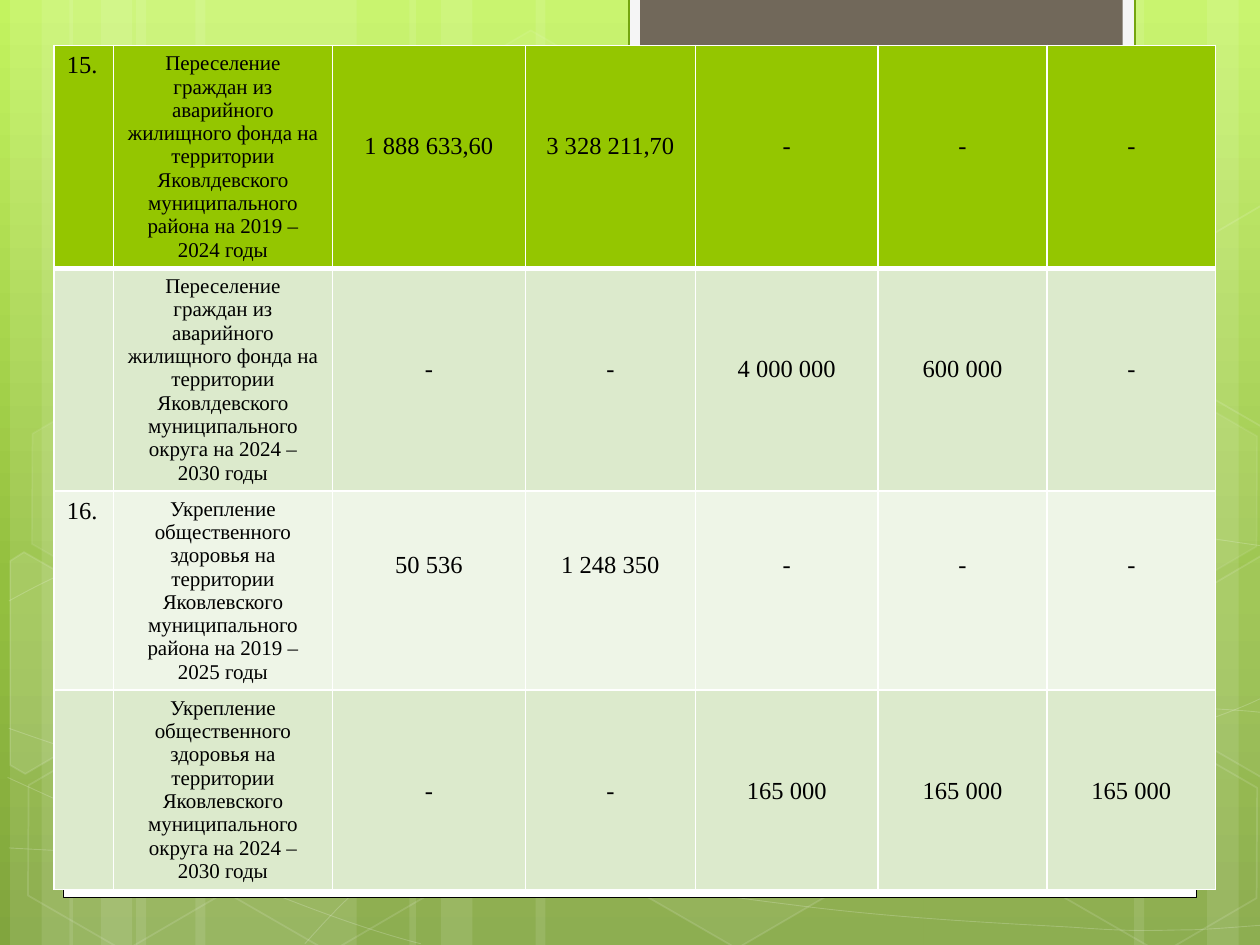
from copy import deepcopy
from dataclasses import dataclass
from math import cos, radians, sin

from pptx import Presentation
from pptx.dml.color import RGBColor
from pptx.enum.shapes import MSO_SHAPE
from pptx.enum.text import MSO_ANCHOR, PP_ALIGN
from pptx.oxml import parse_xml
from pptx.oxml.ns import nsdecls, qn
from pptx.util import Cm, Pt

RECTANGLE, HEXAGON = MSO_SHAPE.RECTANGLE, MSO_SHAPE.HEXAGON
TOP, MIDDLE = MSO_ANCHOR.TOP, MSO_ANCHOR.MIDDLE
LEFT, CENTER = PP_ALIGN.LEFT, PP_ALIGN.CENTER
FONT, WHITE, BLACK = "Times New Roman", "FFFFFF", "000000"
GRID = 2.54  # cm per layout unit; the slide is 10 by 7.5 units
TILT = 30  # degrees, shared by all hexagons


@dataclass
class Style:
    """Fill and line; alphas are percentages."""
    fill: str | None = None
    fill_alpha: int = 100
    line: str | None = None
    width: float = 1
    line_alpha: int = 100


@dataclass
class Band:
    left: float
    width: float
    rotation: int = 0


@dataclass
class Hexagon:
    left: float
    top: float
    fill_alpha: int
    line_alpha: int


@dataclass
class CutHexagon:
    """A hexagon clipped by the slide edge, with corners as they appear when tilted."""
    center: tuple[float, float]
    fill_alpha: int
    corners: list[tuple[float, float]]


@dataclass
class Programme:
    number: str
    title: str
    values: tuple[str, ...]
    fill: str
    height: float
    value_margin: float


BANDS = [Band(1.08, 1.75), Band(0.08, 0.5), Band(0.33, 0.83), Band(1.55, 1.75),
         Band(0.55, 0.5), Band(0.8, 0.83), Band(7.33, 1.75, 180), Band(9.58, 0.5, 180),
         Band(9, 0.83, 180), Band(4.25, 3.08), Band(3.25, 0.5), Band(3.5, 0.83)]

# Each curve: a start point, then cubic segments (six numbers) or straight ones (two)
CURVES = [
    [(0.07, 6.73), (0.61, 6.76, 1.15, 6.79, 1.9, 6.78), (2.65, 6.77, 3.58, 6.75, 4.58, 6.65),
     (5.58, 6.55, 7, 6.36, 7.92, 6.17), (8.83, 5.98, 9.77, 5.68, 10.07, 5.51)],
    [(0.07, 4.77), (0.36, 4.61, 0.65, 4.46, 1.21, 4.31), (1.78, 4.16, 2.59, 3.94, 3.47, 3.87),
     (4.36, 3.8, 5.44, 3.79, 6.54, 3.87), (7.64, 3.95, 9.47, 4.26, 10.07, 4.34)],
    [(0.06, 6.17), (1.27, 6.72, 2.47, 7.27, 3.34, 7.49)],
    [(0.07, 5.78), (0.38, 5.89, 0.7, 6, 1.28, 6.16), (1.86, 6.31, 2.73, 6.56, 3.57, 6.73),
     (4.4, 6.9, 5.45, 7.08, 6.28, 7.18), (7.11, 7.29, 8, 7.33, 8.53, 7.36),
     (9.05, 7.4, 9.19, 7.38, 9.45, 7.38), (9.71, 7.37, 9.89, 7.35, 10.07, 7.34)],
    [(2.42, 7.49), (2.6, 7.29, 2.78, 7.09, 3.02, 6.91), (3.26, 6.73, 3.6, 6.53, 3.88, 6.39),
     (4.16, 6.25, 4.33, 6.19, 4.7, 6.09), (5.06, 5.99, 5.73, 5.85, 6.08, 5.78),
     (6.44, 5.71, 6.49, 5.71, 6.8, 5.69), (7.11, 5.66, 7.6, 5.63, 7.94, 5.62),
     (8.29, 5.61, 8.86, 5.62, 8.86, 5.62), (9.53, 5.62),
     (9.71, 5.63, 9.88, 5.64, 9.97, 5.65), (10.06, 5.66, 10.03, 5.65, 10.06, 5.66)],
]

HEXAGONS = [
    Hexagon(3.34, 0.36, 4, 8), Hexagon(4.97, 5.89, 6, 12), Hexagon(0.11, 5.91, 0, 12),
    Hexagon(0.14, 3.12, 7, 8), Hexagon(1.74, 5.92, 0, 12), Hexagon(7.53, 4.53, 10, 12),
    Hexagon(8.34, 5.93, 0, 12), Hexagon(8.34, 3.14, 7, 8),
]
CUT_HEXAGONS = [
    CutHexagon((0.36, 5.35), 10, [(0.08, 4.45), (0.19, 4.38), (0.96, 4.82), (0.95, 5.7),
                                  (0.2, 6.14), (0.08, 6.07)]),
    CutHexagon((9.85, 5.2), 4, [(9.26, 4.85), (10.01, 4.41), (10.09, 4.46), (10.09, 6.13),
                                (10.02, 6.17), (9.26, 5.73)]),
    CutHexagon((9.85, 2.41), 0, [(9.26, 2.07), (10.01, 1.63), (10.1, 1.68), (10.09, 3.35),
                                 (10.02, 3.39), (9.26, 2.95)]),
]

RESETTLEMENT = "Переселение граждан из аварийного жилищного фонда на территории Яковлдевского муниципального "
HEALTH = "Укрепление общественного здоровья на территории Яковлевского муниципального "
PROGRAMMES = [
    Programme("15.", RESETTLEMENT + "района на 2019 – 2024 годы",
              ("1 888 633,60", "3 328 211,70", "-", "-", "-"), "94C600", 4.5, 1.77),
    Programme("", RESETTLEMENT + "округа на 2024 – 2030 годы",
              ("-", "-", "4 000 000", "600 000", "-"), "DCEACC", 4.48, 1.76),
    Programme("16.", HEALTH + "района на 2019 – 2025 годы",
              ("50 536", "1 248 350", "-", "-", "-"), "EEF5E7", 4.01, 1.23),
    Programme("", HEALTH + "округа на 2024 – 2030 годы",
              ("-", "-", "165 000", "165 000", "165 000"), "DCEACC", 4.01, 1.76),
]
COLUMN_WIDTHS = [0.47, 1.74, 1.53, 1.35, 1.45, 1.34, 1.34]


def rgb(value: str) -> RGBColor:
    return RGBColor.from_string(value)


def units(value: float) -> int:
    return Cm(value * GRID)


def set_alpha(parent, percent: int) -> None:
    if percent < 100:
        color = next(parent.iter(qn("a:srgbClr")))
        color.append(parse_xml(f'<a:alpha {nsdecls("a")} val="{percent * 1000}"/>'))


def apply_style(shape, style: Style) -> None:
    shape.shadow.inherit = False
    properties = shape._element.spPr
    if style.fill and style.fill_alpha:
        shape.fill.solid()
        shape.fill.fore_color.rgb = rgb(style.fill)
        set_alpha(properties.find(qn("a:solidFill")), style.fill_alpha)
    else:
        shape.fill.background()
    if style.line:
        shape.line.color.rgb = rgb(style.line)
        shape.line.width = Pt(style.width)
        set_alpha(properties.find(qn("a:ln")), style.line_alpha)
    else:
        shape.line.fill.background()


def add_preset(slide, preset, box: tuple[float, ...], style: Style):
    shape = slide.shapes.add_shape(preset, *map(units, box))
    apply_style(shape, style)
    return shape


def add_outline(slide, points: list, style: Style, closed: bool):
    start, *rest = [(units(x), units(y)) for x, y in points]
    builder = slide.shapes.build_freeform(*start)
    builder.add_line_segments(rest, close=closed)
    shape = builder.convert_to_shape()
    apply_style(shape, style)
    return shape


def add_curve(slide, curve: list, style: Style) -> None:
    """Draw the control points as an outline, then join each three into a cubic segment."""
    points = [pair for part in curve for pair in zip(part[::2], part[1::2])]
    shape = add_outline(slide, points, style, False)
    lines = iter(list(shape._element.iter(qn("a:lnTo"))))
    for segment in curve[1:]:
        first, *others = [next(lines) for _ in segment[::2]]
        if others:
            cubic = parse_xml(f'<a:cubicBezTo {nsdecls("a")}/>')
            first.addprevious(cubic)
            for line in (first, *others):
                cubic.append(line[0])
                line.getparent().remove(line)


def add_cut_hexagon(slide, item: CutHexagon) -> None:
    """Draw the corners turned back by the tilt, then tilt the shape itself."""
    c, s = cos(radians(TILT)), sin(radians(TILT))
    middle_x, middle_y = item.center
    offsets = [(x - middle_x, y - middle_y) for x, y in item.corners]
    upright = [(middle_x + x * c + y * s, middle_y - x * s + y * c) for x, y in offsets]
    shape = add_outline(slide, upright, Style(WHITE, item.fill_alpha, WHITE, 1, 12), True)
    shape.rotation = TILT


def paint_background(slide) -> None:
    fill = slide.background.fill
    fill.gradient()
    fill.gradient_angle = 270
    stop_list = next(slide._element.iter(qn("a:gsLst")))
    stop_list.append(deepcopy(stop_list[-1]))
    for stop, (position, color) in zip(fill.gradient_stops,
                                       [(0, "C3F35F"), (0.62, "93BF3F"), (1, "81A53E")]):
        stop.position = position
        stop.color.rgb = rgb(color)


def fill_cell(cell, text: str, size: float, align, anchor, fill: str, row: int) -> None:
    widths = {"L": 1, "R": 1, "T": 3 if row == 1 else 1, "B": 3 if row == 0 else 1}
    for side, width in widths.items():
        cell._tc.get_or_add_tcPr().append(parse_xml(
            f'<a:ln{side} {nsdecls("a")} w="{Pt(width)}"><a:solidFill>'
            f'<a:srgbClr val="{WHITE}"/></a:solidFill></a:ln{side}>'))
    cell.fill.solid()
    cell.fill.fore_color.rgb = rgb(fill)
    cell.vertical_anchor = anchor
    cell.text_frame.text = text
    paragraph = cell.text_frame.paragraphs[0]
    paragraph.alignment = align
    for run in paragraph.runs:
        run.font.name, run.font.size, run.font.bold = FONT, Pt(size), False
        run.font.color.rgb = rgb(BLACK)


def add_programme_table(slide) -> None:
    table = slide.shapes.add_table(
        len(PROGRAMMES), len(COLUMN_WIDTHS), units(0.43), units(0.36),
        units(sum(COLUMN_WIDTHS)), Cm(sum(p.height for p in PROGRAMMES))).table
    table.first_row = table.horz_banding = False
    for column, width in zip(table.columns, COLUMN_WIDTHS):
        column.width = units(width)
    for row, item in enumerate(PROGRAMMES):
        table.rows[row].height = Cm(item.height)
        fill_cell(table.cell(row, 0), item.number, 14, LEFT, TOP, item.fill, row)
        fill_cell(table.cell(row, 1), item.title, 12, CENTER, MIDDLE, item.fill, row)
        for column, value in enumerate(item.values, start=2):
            cell = table.cell(row, column)
            fill_cell(cell, value, 14, CENTER, TOP, item.fill, row)
            cell.margin_top = Cm(item.value_margin)


def main() -> None:
    deck = Presentation()
    deck.slide_width, deck.slide_height = units(10), units(7.5)
    slide = deck.slides.add_slide(deck.slide_layouts[6])
    paint_background(slide)
    for band in BANDS:
        stripe = add_preset(slide, RECTANGLE, (band.left, 0, band.width, 7.5), Style(WHITE, 10))
        stripe.rotation = band.rotation
    for curve in CURVES:
        add_curve(slide, curve, Style(line=WHITE, width=0.5, line_alpha=20))
    for item in HEXAGONS:
        hexagon = add_preset(slide, HEXAGON, (item.left, item.top, 1.75, 1.52),
                             Style(WHITE, item.fill_alpha, WHITE, 1, item.line_alpha))
        hexagon.adjustments[0] = 0.285
        hexagon.rotation = TILT
    for item in CUT_HEXAGONS:
        add_cut_hexagon(slide, item)
    add_preset(slide, RECTANGLE, (0.5, 0.36, 9, 6.76), Style(WHITE, line=BLACK, width=0.5))
    add_preset(slide, RECTANGLE, (4.99, -0.02, 4.02, 0.76), Style("F5F5F5", line="74A510", width=1.25))
    add_preset(slide, RECTANGLE, (5.08, -0.02, 3.83, 0.68), Style("71685A"))
    add_programme_table(slide)
    deck.save("out.pptx")


if __name__ == "__main__":
    main()
